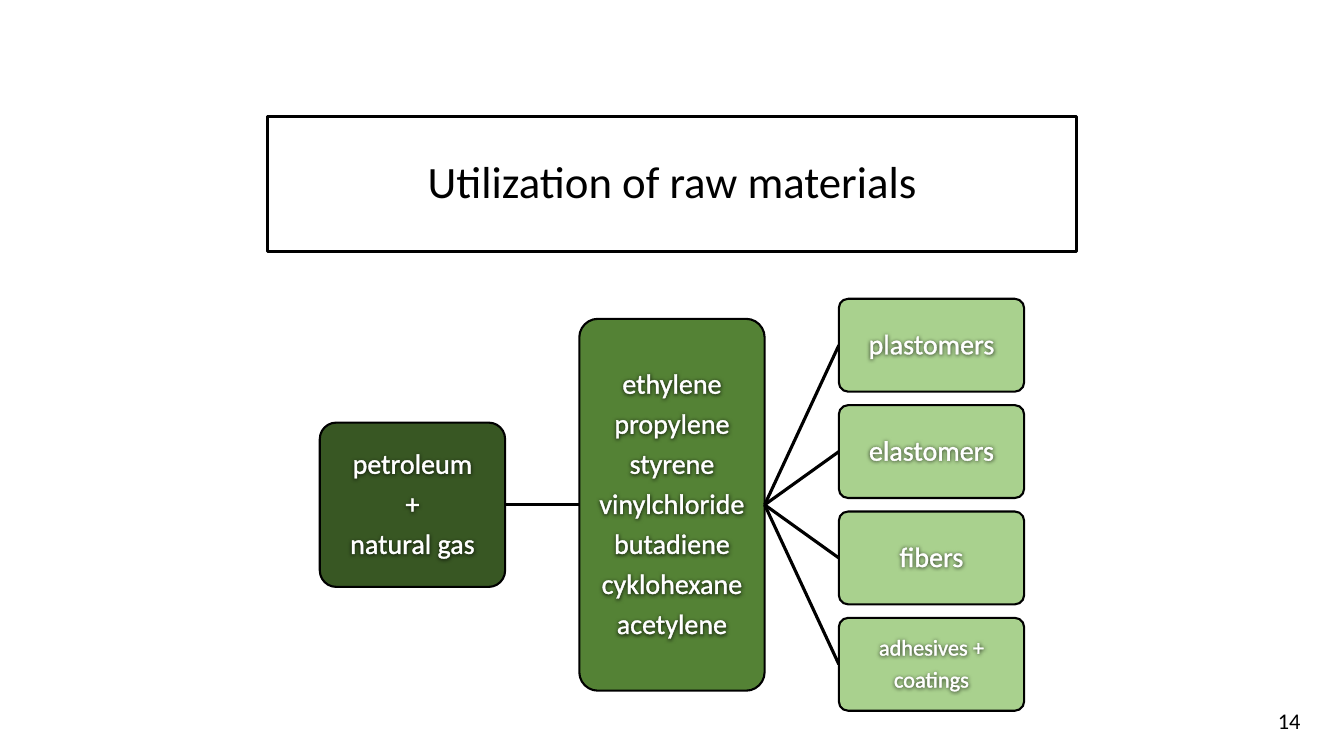
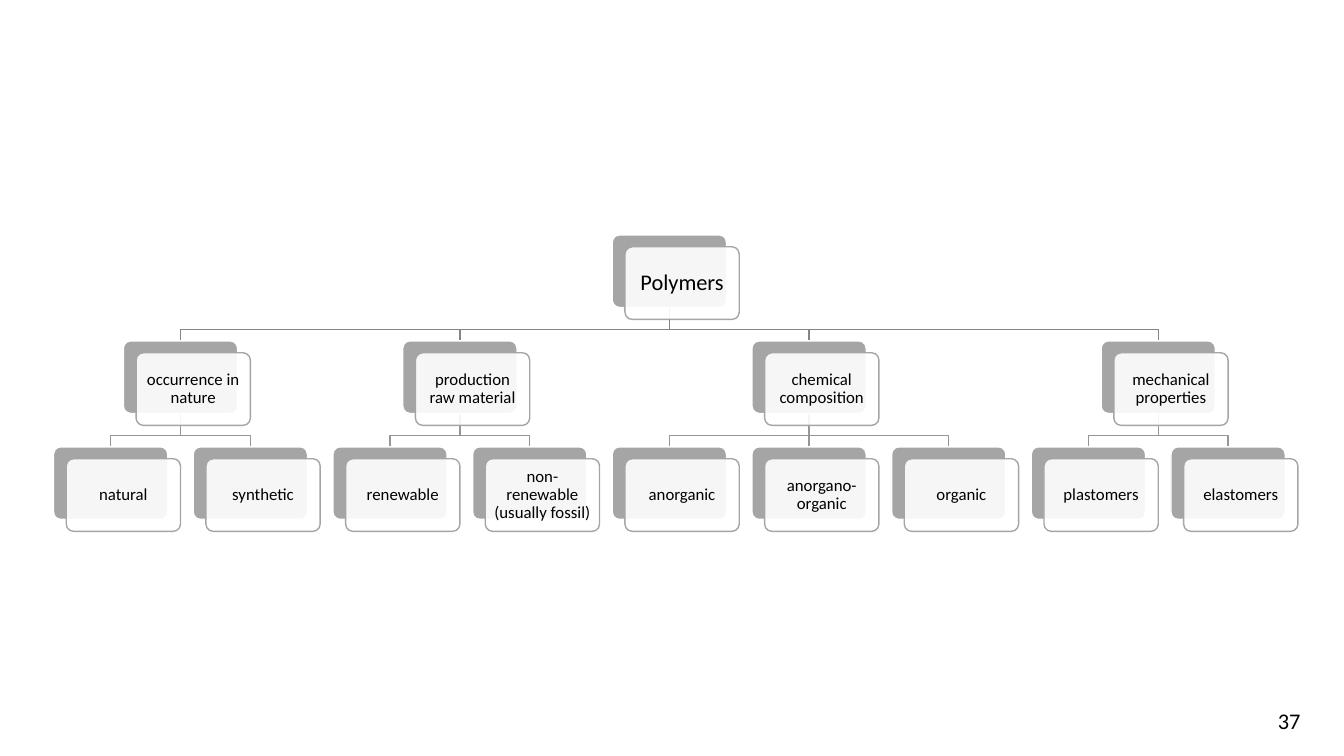
"""Build two slides on polymers: a raw material flow and a classification tree."""
from lxml import etree
from pptx import Presentation
from pptx.dml.color import RGBColor
from pptx.enum.shapes import MSO_CONNECTOR as Connector, MSO_SHAPE as Shape
from pptx.enum.text import MSO_ANCHOR as Anchor, PP_ALIGN as Align
from pptx.oxml import parse_xml
from pptx.oxml.ns import nsdecls, qn
from pptx.util import Cm, Pt

FONT = "Calibri"
BLACK, WHITE, GREY = "000000", "FFFFFF", "A5A5A5"

FLOW_TITLE = "Utilization of raw materials"
FLOW_COLUMNS = [
    {"fill": "385723", "height": 4.14, "boxes": [(["petroleum", "+", "natural gas"], 20)]},
    {"fill": "548235", "height": 9.37, "boxes": [
        (["ethylene", "propylene", "styrene", "vinylchloride", "butadiene", "cyklohexane",
          "acetylene"], 20)]},
    {"fill": "A9D18E", "height": 2.34, "boxes": [
        (["plastomers"], 20), (["elastomers"], 20), (["fibers"], 20),
        (["adhesives +", "coatings"], 16)]},
]
FLOW_LEFT, FLOW_MIDDLE, FLOW_WIDTH = 8.06, 12.72, 4.67
COLUMN_PITCH, ROW_PITCH = 6.54, 2.68

TREE_ROOT = "Polymers"
TREE_BRANCHES = [
    ("occurrence in nature", ["natural", "synthetic"]),
    ("production raw material", ["renewable", "non-renewable (usually fossil)"]),
    ("chemical composition", ["anorganic", "anorgano-organic", "organic"]),
    ("mechanical properties", ["plastomers", "elastomers"]),
]
CARD_WIDTH, CARD_HEIGHT = 2.88, 1.83
CARD_SHIFT_X, CARD_SHIFT_Y = 0.32, 0.3
LEAF_CENTER, LEAF_PITCH = 2.79, 3.52
LEVEL_TOPS = [5.92, 8.59, 11.26]
BEND = 0.56


def color(value):
    return RGBColor.from_string(value)


def write(shape, lines, size=12, ink=BLACK, inset=0.13, gap=0.35, spacing=0.9, wrap=True):
    frame = shape.text_frame
    frame.word_wrap = wrap
    frame.vertical_anchor = Anchor.MIDDLE
    frame.margin_left = frame.margin_right = Cm(inset)
    frame.margin_top = frame.margin_bottom = Cm(inset)
    frame.text = "\n".join(lines)
    for paragraph in frame.paragraphs:
        paragraph.alignment = Align.CENTER
        paragraph.line_spacing = spacing
        paragraph.space_after = Pt(size * gap)
        paragraph.font.name = FONT
        paragraph.font.size = Pt(size)
        paragraph.font.color.rgb = color(ink)


def add_box(slide, left, top, width, height, fill, line, weight, opacity=100):
    box = slide.shapes.add_shape(
        Shape.ROUNDED_RECTANGLE, Cm(left), Cm(top), Cm(width), Cm(height))
    box.adjustments[0] = 0.1
    box.shadow.inherit = False
    box.fill.solid()
    box.fill.fore_color.rgb = color(fill)
    if opacity < 100:
        fill_color = box.fill._xPr.find(qn("a:solidFill"))[0]
        etree.SubElement(fill_color, qn("a:alpha"), val=str(opacity * 1000))
    box.line.color.rgb = color(line)
    box.line.width = Pt(weight)
    return box


def add_text(slide, left, top, width, height, lines, **style):
    box = slide.shapes.add_textbox(Cm(left), Cm(top), Cm(width), Cm(height))
    write(box, lines, **style)
    return box


def add_line(slide, start_x, start_y, end_x, end_y, ink, weight):
    line = slide.shapes.add_connector(
        Connector.STRAIGHT, Cm(start_x), Cm(start_y), Cm(end_x), Cm(end_y))
    line.line.color.rgb = color(ink)
    line.line.width = Pt(weight)
    etree.SubElement(line._element.spPr, qn("a:effectLst"))


def add_branch(slide, points, ink):
    start, *others = [(Cm(x), Cm(y)) for x, y in points]
    builder = slide.shapes.build_freeform(*start)
    builder.add_line_segments(others, close=False)
    branch = builder.convert_to_shape()
    branch.shadow.inherit = False
    branch.fill.background()
    branch.line.color.rgb = color(ink)
    branch.line.width = Pt(1)


def add_outline_and_shadow(shape):
    for paragraph in shape.text_frame.paragraphs:
        for run in paragraph.runs:
            run._r.get_or_add_rPr().insert(0, parse_xml(
                f'<a:ln {nsdecls("a")} w="9525"><a:solidFill><a:srgbClr val="{WHITE}"/>'
                '</a:solidFill></a:ln>'))
    shape._element.spPr.append(parse_xml(
        f'<a:effectLst {nsdecls("a")}><a:outerShdw blurRad="38100" dist="6350" dir="5400000" '
        f'algn="ctr" rotWithShape="0"><a:srgbClr val="{BLACK}"><a:alpha val="63000"/>'
        '</a:srgbClr></a:outerShdw></a:effectLst>'))


def add_slide(presentation, layout, number):
    slide = presentation.slides.add_slide(presentation.slide_layouts[layout])
    add_text(slide, 31.74, 17.78, 1.5, 0.74, [number], size=16, gap=0, spacing=1, wrap=False)
    return slide


def build_flow(presentation):
    slide = add_slide(presentation, 5, "14")
    title = slide.shapes.title
    title.left, title.top, title.width, title.height = Cm(6.75), Cm(2.93), Cm(20.39), Cm(3.4)
    title.line.color.rgb = color(BLACK)
    title.line.width = Pt(2.25)
    write(title, [FLOW_TITLE], size=32, gap=0)
    for index, column in enumerate(FLOW_COLUMNS):
        left = FLOW_LEFT + index * COLUMN_PITCH
        height, boxes = column["height"], column["boxes"]
        for row, (lines, size) in enumerate(boxes):
            middle = FLOW_MIDDLE + (row - (len(boxes) - 1) / 2) * ROW_PITCH
            if index:
                previous_right = left - COLUMN_PITCH + FLOW_WIDTH
                add_line(slide, previous_right, FLOW_MIDDLE, left, middle, BLACK, 2.25)
            frame = (left, middle - height / 2, FLOW_WIDTH, height)
            add_box(slide, *frame, column["fill"], BLACK, 1.5)
            add_outline_and_shadow(add_text(slide, *frame, lines, size=size, ink=WHITE))


def add_card(slide, center, level, text):
    left, top = center - CARD_WIDTH / 2, LEVEL_TOPS[level]
    add_box(slide, left, top, CARD_WIDTH, CARD_HEIGHT, GREY, WHITE, 1)
    front = add_box(slide, left + CARD_SHIFT_X, top + CARD_SHIFT_Y, CARD_WIDTH, CARD_HEIGHT,
                    WHITE, GREY, 1, opacity=90)
    write(front, [text], size=12 if level else 16, inset=0.13 if level else 0.18)


def add_fork(slide, center, level, child_centers, ink):
    bottom = LEVEL_TOPS[level] + CARD_HEIGHT
    bend, end = bottom + BEND, LEVEL_TOPS[level + 1]
    for child in child_centers:
        add_branch(slide, [(center, bottom), (center, bend), (child, bend), (child, end)], ink)


def build_tree(presentation):
    slide = add_slide(presentation, 6, "37")
    cards, branch_centers, leaf_count = [], [], 0
    for branch, leaves in TREE_BRANCHES:
        centers = [LEAF_CENTER + (leaf_count + i) * LEAF_PITCH for i in range(len(leaves))]
        leaf_count += len(leaves)
        middle = (centers[0] + centers[-1]) / 2
        branch_centers.append(middle)
        add_fork(slide, middle, 1, centers, "969696")
        cards.append((middle, 1, branch))
        cards.extend((center, 2, leaf) for center, leaf in zip(centers, leaves))
    root_center = (branch_centers[0] + branch_centers[-1]) / 2
    add_fork(slide, root_center, 0, branch_centers, "848484")
    for card in [(root_center, 0, TREE_ROOT)] + cards:
        add_card(slide, *card)


def main():
    presentation = Presentation()
    presentation.slide_width, presentation.slide_height = Cm(33.87), Cm(19.05)
    build_flow(presentation)
    build_tree(presentation)
    presentation.save("out.pptx")


if __name__ == "__main__":
    main()
